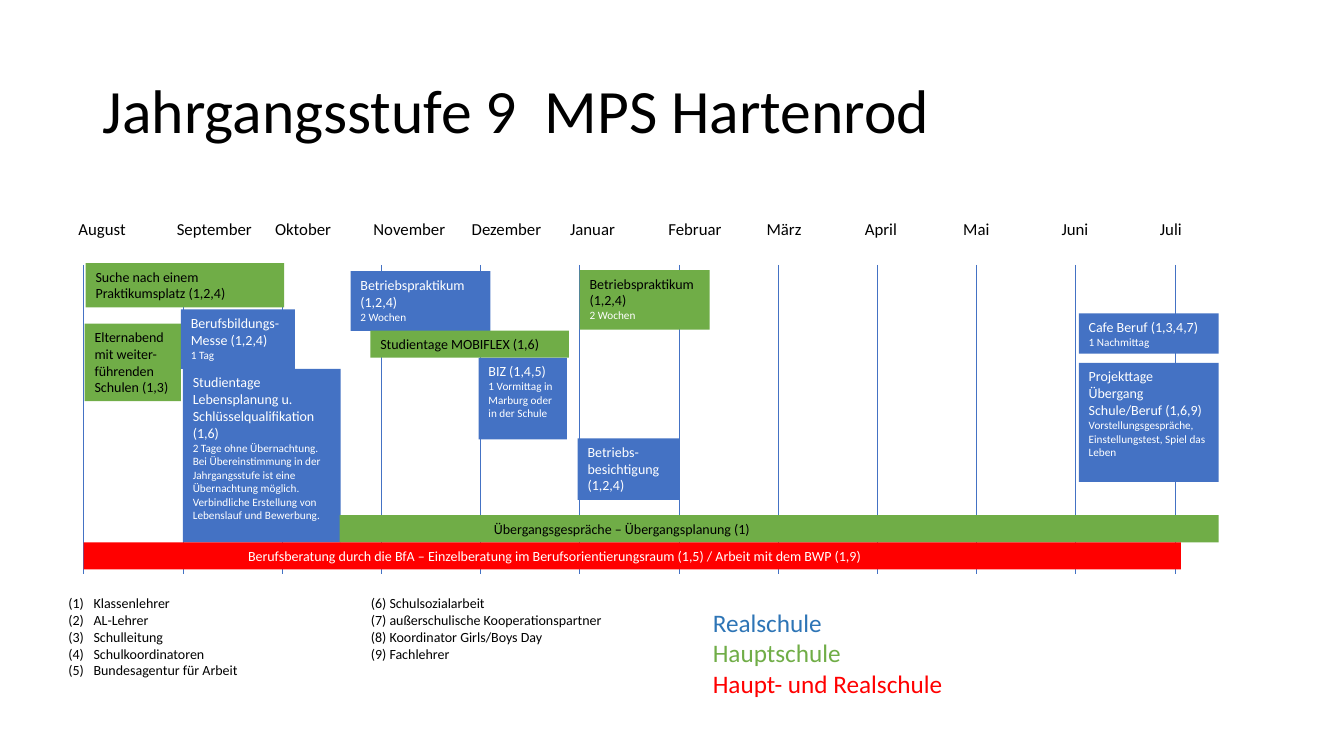
from lxml.etree import SubElement
from pptx import Presentation
from pptx.dml.color import RGBColor
from pptx.enum.shapes import MSO_CONNECTOR as Connector, MSO_SHAPE as Preset
from pptx.enum.text import MSO_ANCHOR as Anchor, PP_ALIGN as Align
from pptx.oxml.ns import qn
from pptx.util import Inches, Pt

WIDTH, HEIGHT = 13.33, 7.5
LEFT, TOP = 0.83, 2.61      # start of August, top of the calendar
COLUMN, ROW = 0.984, 0.27   # one month, one single-line bar
LABEL_PITCH = 0.975
BLUE, GREEN, RED = "4472C4", "70AD47", "FF0000"
BLACK, WHITE = "000000", "FFFFFF"
TEXT_COLORS = {BLUE: WHITE, GREEN: BLACK, RED: WHITE}

MONTHS = ["August", "September", "Oktober", "November", "Dezember", "Januar",
          "Februar", "März", "April", "Mai", "Juni", "Juli"]

# fill, column, row, columns wide, rows high, heading lines, note lines
EVENTS = [
    (GREEN, 0.02, 0, 2, 1.63, ["Suche nach einem Praktikumsplatz (1,2,4)"], []),
    (GREEN, 0.01, 2.22, 0.97, 2.85,
     ["Elternabend", "mit weiter-", "führenden", "Schulen (1,3)"], []),
    (BLUE, 0.98, 1.7, 1.15, 2.19, ["Berufsbildungs-", "Messe (1,2,4)"], ["1 Tag"]),
    (BLUE, 1, 3.89, 1.59, 6.37,
     ["Studientage Lebensplanung u.", "Schlüsselqualifikation (1,6)"],
     ["2 Tage ohne Übernachtung. Bei Übereinstimmung in der Jahrgangsstufe ist "
      "eine Übernachtung möglich. Verbindliche Erstellung von Lebenslauf und "
      "Bewerbung."]),
    (BLUE, 2.69, 0.3, 1.41, 2.19, ["Betriebspraktikum (1,2,4)"], ["2 Wochen"]),
    (GREEN, 2.89, 2.48, 2, 1, ["Studientage MOBIFLEX (1,6)"], []),
    (BLUE, 3.98, 3.48, 0.89, 3, ["BIZ (1,4,5)"],
     ["1 Vormittag in Marburg oder in der Schule"]),
    (GREEN, 5, 0.26, 1.31, 2.19, ["Betriebspraktikum (1,2,4)"], ["2 Wochen"]),
    (BLUE, 4.98, 6.44, 1.03, 2.26, ["Betriebs-", "besichtigung", "(1,2,4)"], []),
    (BLUE, 10.03, 1.85, 1.41, 1.48, ["Cafe Beruf (1,3,4,7)"], ["1 Nachmittag"]),
    (BLUE, 10.03, 3.67, 1.41, 4.37, ["Projekttage Übergang Schule/Beruf (1,6,9)"],
     ["Vorstellungsgespräche,", "Einstellungstest, Spiel das Leben"]),
]

# fill, column, row, columns wide, text, left inset in inches
BARS = [
    (GREEN, 2.58, 9.26, 8.86, "Übergangsgespräche – Übergangsplanung (1)", 1.53),
    (RED, 0, 10.26, 11.06,
     "Berufsberatung durch die BfA – Einzelberatung im Berufsorientierungsraum "
     "(1,5) / Arbeit mit dem BWP (1,9)", 1.63),
]

PARTNERS = ["Klassenlehrer\t(6) Schulsozialarbeit",
            "AL-Lehrer\t(7) außerschulische Kooperationspartner",
            "Schulleitung\t(8) Koordinator Girls/Boys Day",
            "Schulkoordinatoren\t(9) Fachlehrer",
            "Bundesagentur für Arbeit"]

SCHOOLS = [("Realschule", "2E75B6"), ("Hauptschule", GREEN),
           ("Haupt- und Realschule", RED)]


def rgb(color):
    return RGBColor.from_string(color)


def column_x(column):
    return Inches(LEFT + column * COLUMN)


def row_y(row):
    return Inches(TOP + row * ROW)


def write(frame, lines):
    """Fill a text frame with one paragraph per (text, size, color)."""
    frame.word_wrap = True
    for index, (text, size, color) in enumerate(lines):
        paragraph = frame.paragraphs[0] if index == 0 else frame.add_paragraph()
        paragraph.alignment = Align.LEFT
        run = paragraph.add_run()
        run.text = text
        for name, value in {"name": "Calibri", "size": Pt(size)}.items():
            setattr(run.font, name, value)
        run.font.color.rgb = rgb(color)


def add_text(slide, left, top, width, height, lines):
    """Add a text box placed by shares of the slide's size."""
    box = slide.shapes.add_textbox(
        Inches(left * WIDTH), Inches(top * HEIGHT),
        Inches(width * WIDTH), Inches(height * HEIGHT))
    write(box.text_frame, lines)
    return box.text_frame


def add_tab_stops(paragraph, positions):
    tab_list = SubElement(paragraph._p.get_or_add_pPr(), qn("a:tabLst"))
    for position in positions:
        SubElement(tab_list, qn("a:tab"), pos=str(Inches(position)), algn="l")


def number_paragraph(paragraph):
    properties = paragraph._p.get_or_add_pPr()
    for name, value in {"marL": 0.25, "indent": -0.25}.items():
        properties.set(name, str(Inches(value)))
    SubElement(properties, qn("a:buAutoNum"), type="arabicParenBoth")


def add_month_line(slide, column):
    line = slide.shapes.add_connector(
        Connector.STRAIGHT, column_x(column), row_y(0.07),
        column_x(column), row_y(11.44))
    line.line.color.rgb = rgb(BLUE)
    line.line.width = Pt(0.5)
    SubElement(line._element.spPr, qn("a:effectLst"))


def add_box(slide, fill, column, row, columns, rows, lines):
    box = slide.shapes.add_shape(
        Preset.RECTANGLE, column_x(column), row_y(row),
        Inches(columns * COLUMN), Inches(rows * ROW))
    box.shadow.inherit = False
    box.fill.solid()
    box.fill.fore_color.rgb = rgb(fill)
    box.line.fill.background()
    box.text_frame.vertical_anchor = Anchor.TOP
    write(box.text_frame, lines)
    return box.text_frame


def add_event(slide, fill, column, row, columns, rows, heading, notes):
    lines = [(text, 10, TEXT_COLORS[fill]) for text in heading]
    lines += [(text, 8, WHITE) for text in notes]
    add_box(slide, fill, column, row, columns, rows, lines)


def add_bar(slide, fill, column, row, columns, text, inset):
    frame = add_box(slide, fill, column, row, columns, 1,
                    [(text, 10, TEXT_COLORS[fill])])
    frame.margin_left = Inches(inset)


def main():
    presentation = Presentation()
    presentation.slide_width = Inches(WIDTH)
    presentation.slide_height = Inches(HEIGHT)
    slide = presentation.slides.add_slide(presentation.slide_layouts[6])

    title = add_text(slide, 0.069, 0.053, 0.863, 0.193,
                     [("Jahrgangsstufe 9  MPS Hartenrod", 44, BLACK)])
    title.vertical_anchor = Anchor.MIDDLE
    title.paragraphs[0].line_spacing = 0.9

    for column in range(len(MONTHS)):
        add_month_line(slide, column)
    months = add_text(slide, 0.051, 0.283, 0.907, 0.04,
                      [("\t".join(MONTHS), 12, BLACK)])
    add_tab_stops(months.paragraphs[0],
                  [LABEL_PITCH * month for month in range(1, len(MONTHS))])

    for event in EVENTS:
        add_event(slide, *event)
    for bar in BARS:
        add_bar(slide, *bar)

    partners = add_text(slide, 0.0435, 0.78, 0.416, 0.125,
                        [(text, 10, BLACK) for text in PARTNERS])
    for paragraph in partners.paragraphs:
        number_paragraph(paragraph)
        add_tab_stops(paragraph, [3])
    add_text(slide, 0.523, 0.797, 0.351, 0.135,
             [(text, 18, color) for text, color in SCHOOLS])

    presentation.save("out.pptx")


if __name__ == "__main__":
    main()
